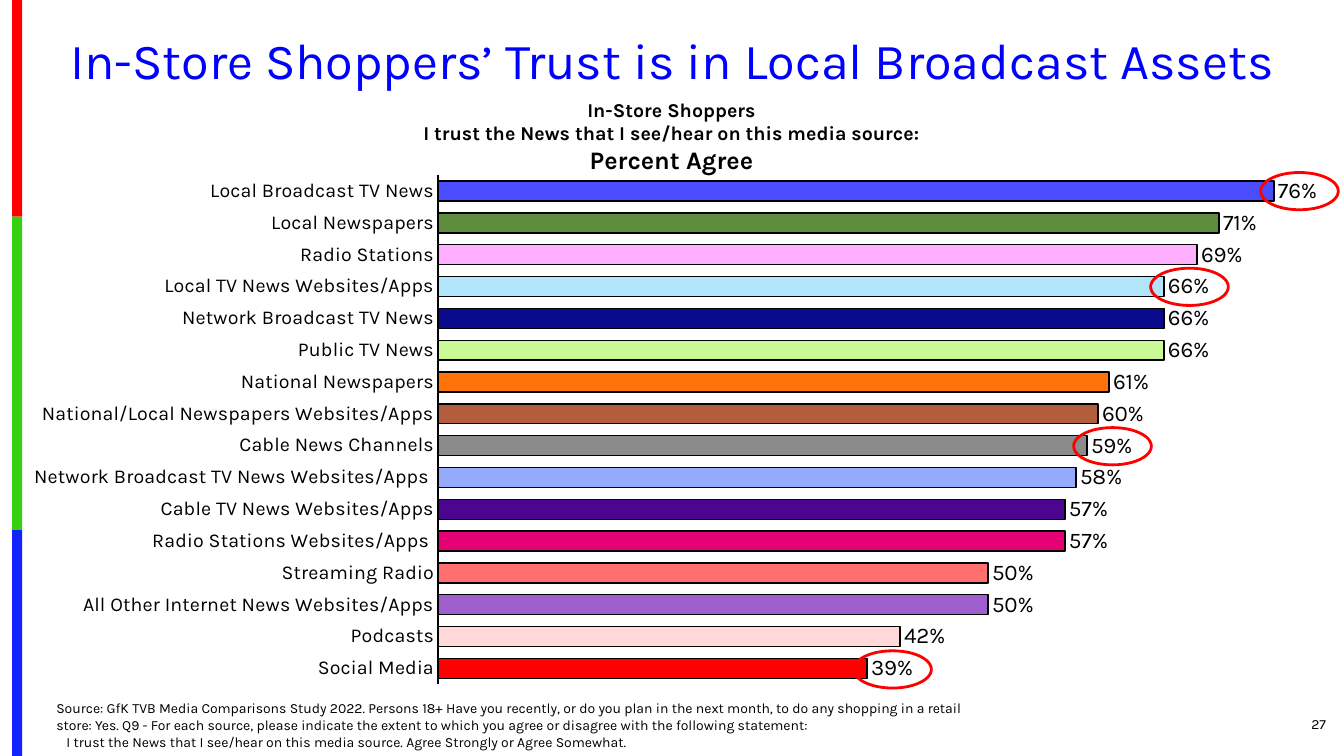
"""Build a slide ranking in-store shoppers' trust in news sources as a bar chart."""
from lxml import etree
from pptx import Presentation
from pptx.chart.data import CategoryChartData
from pptx.dml.color import RGBColor
from pptx.enum.chart import XL_CHART_TYPE, XL_LABEL_POSITION, XL_TICK_MARK
from pptx.enum.shapes import MSO_SHAPE
from pptx.enum.text import MSO_ANCHOR, PP_ALIGN
from pptx.oxml import parse_xml
from pptx.util import Inches, Pt

RECT, OVAL = MSO_SHAPE.RECTANGLE, MSO_SHAPE.OVAL
LEFT, CENTER, RIGHT = PP_ALIGN.LEFT, PP_ALIGN.CENTER, PP_ALIGN.RIGHT
TOP, MIDDLE = MSO_ANCHOR.TOP, MSO_ANCHOR.MIDDLE
BARS = XL_CHART_TYPE.BAR_CLUSTERED
OUTSIDE, NO_TICK = XL_LABEL_POSITION.OUTSIDE_END, XL_TICK_MARK.NONE

THEME = {
    "font": "Karla", "ink": "000000", "title": "0000FF", "ring": "FF0000",
    "stripes": ["FE0000", "36CF12", "1322FE"],
    "title_pt": 36, "lead_pt": 18, "value_pt": 16, "label_pt": 14, "note_pt": 10,
}

prs = Presentation()
prs.slide_width, prs.slide_height = Inches(13.33), Inches(7.5)
COL, ROW = prs.slide_width / 100, prs.slide_height / 100
s = prs.slides.add_slide(prs.slide_layouts[6])


def place(x, y, w, h):
    """Turn columns and rows of a 100 by 100 grid into slide lengths."""
    return round(x * COL), round(y * ROW), round(w * COL), round(h * ROW)


def rgb(name):
    """Look up a theme colour, or read the hex value itself."""
    return RGBColor.from_string(THEME.get(name, name))


stripe_edges = [0, 28.67, 70.13, 100]
for color, top, bottom in zip(THEME["stripes"], stripe_edges, stripe_edges[1:]):
    sp = s.shapes.add_shape(RECT, *place(0.9, top, 0.75, bottom - top))
    sp.shadow.inherit = False
    sp.fill.solid()
    sp.fill.fore_color.rgb = rgb(color)
    sp.line.fill.background()

texts = [
    {"at": (3.45, 4.13, 93.17, 8.67), "anchor": TOP, "color": "title",
     "format": {"alignment": CENTER, "line_spacing": 0.9}, "bold": False,
     "lines": [("In-Store Shoppers’ Trust is in Local Broadcast Assets", "title_pt", 0)]},
    {"at": (76.89, 93.07, 22.5, 5.33), "anchor": MIDDLE, "color": "ink",
     "format": {"alignment": RIGHT}, "bold": False,
     "lines": [("27", "note_pt", 0)]},
    {"at": (3.45, 91.87, 70.29, 8.13), "anchor": TOP, "color": "ink",
     "format": {"alignment": LEFT}, "bold": False,
     "lines": [
         ("Source: GfK TVB Media Comparisons Study 2022. Persons 18+ Have you recently, "
          "or do you plan in the next month, to do any shopping in a retail store: Yes. "
          "Q9 - For each source, please indicate the extent to which you agree or "
          "disagree with the following statement:", "note_pt", 0),
         ("I trust the News that I see/hear on this media source. "
          "Agree Strongly or Agree Somewhat.", "note_pt", 0.75)]},
    {"at": (14.03, 12.27, 71.87, 11.73), "anchor": TOP, "color": "ink",
     "format": {"alignment": CENTER}, "bold": True,
     "lines": [
         ("In-Store Shoppers", "label_pt", 0),
         ("I trust the News that I see/hear on this media source:", "label_pt", 0),
         ("Percent Agree", "lead_pt", 0)]},
]
for text in texts:
    tf = s.shapes.add_textbox(*place(*text["at"])).text_frame
    tf.word_wrap = True
    tf.vertical_anchor = text["anchor"]
    for i, (line, size, indent) in enumerate(text["lines"]):
        p = tf.add_paragraph() if i else tf.paragraphs[0]
        for key, value in text["format"].items():
            setattr(p, key, value)
        if indent:
            p._p.get_or_add_pPr().set("marL", str(round(indent * COL)))
        r = p.add_run()
        r.text = line
        font = {"name": THEME["font"], "size": Pt(THEME[size]), "bold": text["bold"]}
        for key, value in font.items():
            setattr(r.font, key, value)
        r.font.color.rgb = rgb(text["color"])

sources = [
    ("Local Broadcast TV News", 0.76, "4C4CFF"),
    ("Local Newspapers", 0.71, "5C8C3C"),
    ("Radio Stations", 0.69, "FFAFFF"),
    ("Local TV News Websites/Apps", 0.66, "B2E5FC"),
    ("Network Broadcast TV News", 0.66, "0A0A8D"),
    ("Public TV News", 0.66, "CAFA96"),
    ("National Newspapers", 0.61, "FF730A"),
    ("National/Local Newspapers Websites/Apps", 0.60, "B25E3C"),
    ("Cable News Channels", 0.59, "8B8B8B"),
    ("Network Broadcast TV News Websites/Apps ", 0.58, "95A9FD"),
    ("Cable TV News Websites/Apps", 0.57, "4B0590"),
    ("Radio Stations Websites/Apps ", 0.57, "E50073"),
    ("Streaming Radio", 0.50, "FF6F6F"),
    ("All Other Internet News Websites/Apps", 0.50, "9F5FCF"),
    ("Podcasts", 0.42, "FFD9D9"),
    ("Social Media", 0.39, "FF0000"),
]
data = CategoryChartData(number_format="0%")
data.categories = [name for name, _, _ in sources]
data.add_series("Series 1", [value for _, value, _ in sources])
chart_x, chart_y, chart_w, chart_h = 2.48, 21.73, 96.85, 68.93
chart = s.shapes.add_chart(BARS, *place(chart_x, chart_y, chart_w, chart_h), data).chart
chart.has_legend = chart.has_title = False

plot = chart.plots[0]
plot.gap_width = 60
plot.vary_by_categories = False
plot.has_data_labels = True
labels = plot.data_labels
label_format = {"show_value": True, "number_format": "0%",
                "number_format_is_linked": False, "position": OUTSIDE}
for key, value in label_format.items():
    setattr(labels, key, value)

axis_max = 0.8
axis = chart.value_axis
axis_format = {"minimum_scale": 0, "maximum_scale": axis_max,
               "has_major_gridlines": False, "visible": False}
for key, value in axis_format.items():
    setattr(axis, key, value)

cats = chart.category_axis
cats_format = {"reverse_order": True, "major_tick_mark": NO_TICK,
               "minor_tick_mark": NO_TICK, "has_major_gridlines": False}
for key, value in cats_format.items():
    setattr(cats, key, value)
cats.format.line.color.rgb = rgb("ink")
cats.format.line.width = Pt(1.5)

chart_fonts = [(chart.font, "note_pt"), (labels.font, "value_pt"),
               (cats.tick_labels.font, "label_pt")]
for font, size in chart_fonts:
    font.name, font.size = THEME["font"], Pt(THEME[size])
    font.color.rgb = rgb("ink")

for i, (_, _, color) in enumerate(sources):
    bar = plot.series[0].points[i].format
    bar.fill.solid()
    bar.fill.fore_color.rgb = rgb(color)
    bar.line.color.rgb = rgb("ink")
    bar.line.width = Pt(1)

plot_area = {"x": 0.311, "y": 0.021, "w": 0.676, "h": 0.979}
C = "http://schemas.openxmlformats.org/drawingml/2006/chart"
area = chart._chartSpace.find(f".//{{{C}}}plotArea")
for old in area.findall(f"{{{C}}}layout"):
    area.remove(old)
layout = parse_xml(f'<c:layout xmlns:c="{C}"><c:manualLayout/></c:layout>')
settings = [("layoutTarget", "inner"), ("xMode", "edge"), ("yMode", "edge"),
            *plot_area.items()]
for tag, value in settings:
    etree.SubElement(layout[0], f"{{{C}}}{tag}").set("val", str(value))
area.insert(0, layout)

bars_x = chart_x + plot_area["x"] * chart_w
bars_y = chart_y + plot_area["y"] * chart_h
bars_w = plot_area["w"] * chart_w
bar_step = plot_area["h"] * chart_h / len(sources)
ring_w, ring_h = 5.78, 4.93
ringed = ["Local Broadcast TV News", "Local TV News Websites/Apps",
          "Cable News Channels", "Social Media"]
for i, (name, value, _) in enumerate(sources):
    if name in ringed:
        x = bars_x + bars_w * value / axis_max - 1
        y = bars_y + bar_step * (i + 0.5) - ring_h / 2
        sp = s.shapes.add_shape(OVAL, *place(x, y, ring_w, ring_h))
        sp.shadow.inherit = False
        sp.fill.background()
        sp.line.color.rgb = rgb("ring")
        sp.line.width = Pt(2)

prs.save("out.pptx")
